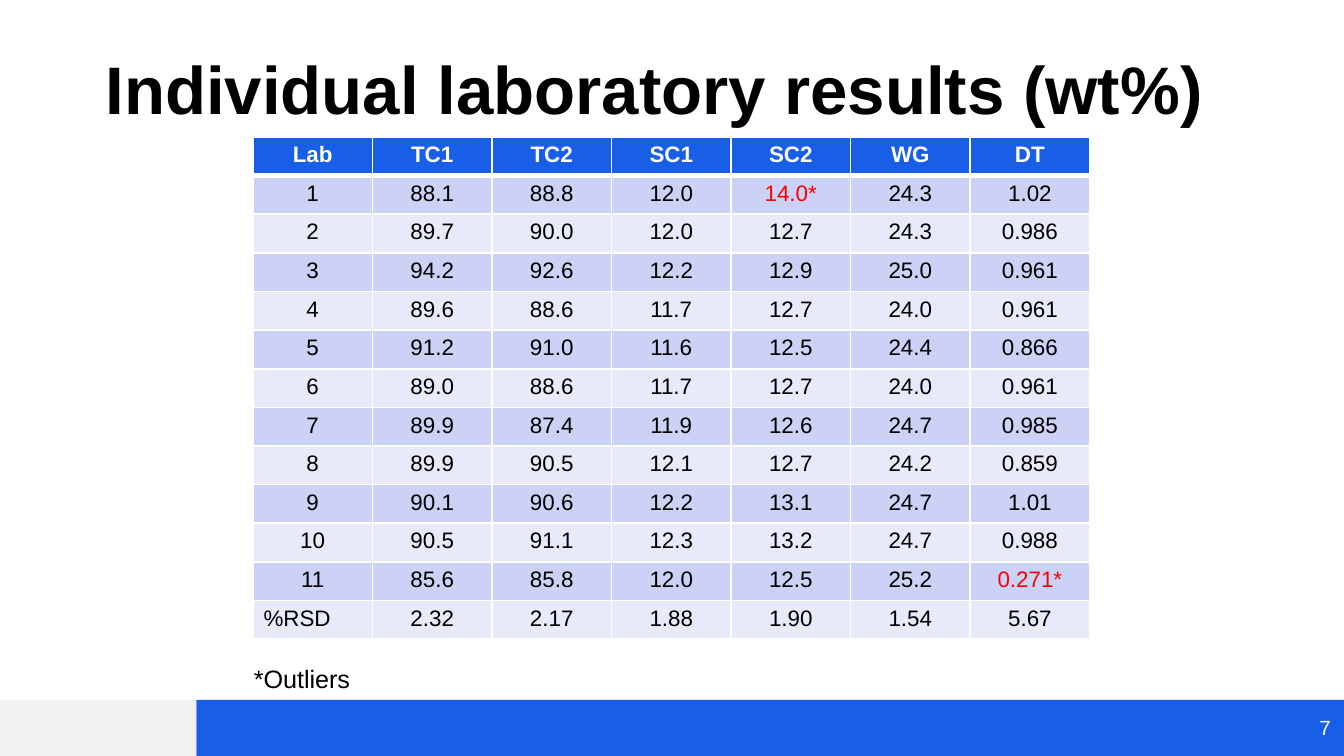
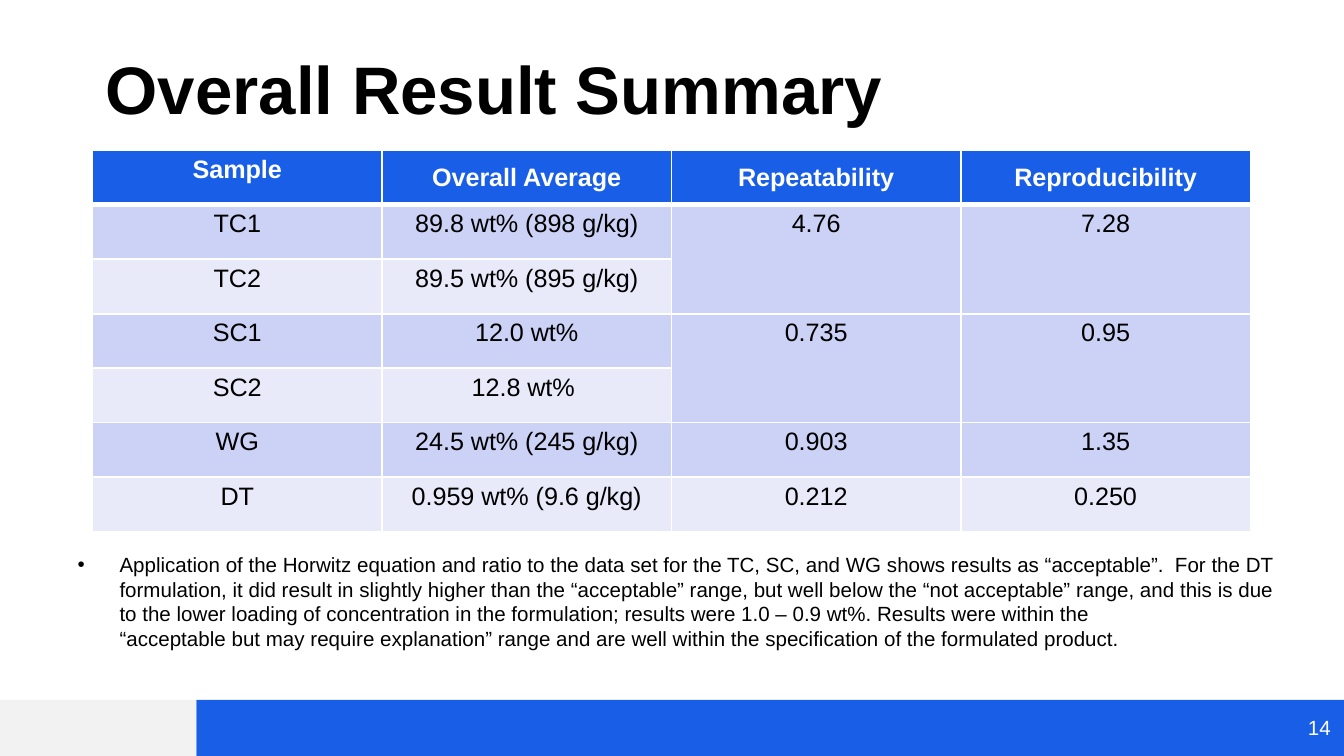
import copy

import pptx
import pptx.dml.color
import pptx.enum.shapes
import pptx.enum.text
import pptx.oxml
import pptx.oxml.ns
import pptx.util

Cm = pptx.util.Cm
Pt = pptx.util.Pt
RGBColor = pptx.dml.color.RGBColor
Align = pptx.enum.text.PP_ALIGN
Anchor = pptx.enum.text.MSO_ANCHOR

BLUE = RGBColor(0x18, 0x5E, 0xE6)
GREY = RGBColor(0xF2, 0xF2, 0xF2)
DARK_ROW = RGBColor(0xCC, 0xD2, 0xF5)
LIGHT_ROW = RGBColor(0xE8, 0xEA, 0xFA)
WHITE = RGBColor(0xFF, 0xFF, 0xFF)
BLACK = RGBColor(0x00, 0x00, 0x00)
RED = RGBColor(0xFF, 0x00, 0x00)
NAMESPACE = pptx.oxml.ns.nsdecls("a")


def write(frame, text, size=12, color=BLACK, bold=False, align=Align.LEFT,
          anchor=Anchor.TOP, line_spacing=None, bullet=None, fit=False):
    frame.vertical_anchor = anchor
    frame.word_wrap = not fit
    if fit:
        frame.auto_size = pptx.enum.text.MSO_AUTO_SIZE.SHAPE_TO_FIT_TEXT
    paragraph = frame.paragraphs[0]
    paragraph.text = text
    paragraph.alignment = align
    if line_spacing:
        paragraph.line_spacing = line_spacing
    if bullet:
        properties = paragraph._p.get_or_add_pPr()
        properties.set("marL", str(Cm(0.79)))
        properties.set("indent", str(-Cm(0.79)))
        properties.append(pptx.oxml.parse_xml(f'<a:buFont {NAMESPACE} typeface="Arial"/>'))
        properties.append(pptx.oxml.parse_xml(f'<a:buChar {NAMESPACE} char="{bullet}"/>'))
    for run in paragraph.runs:
        run.font.name = "Arial"
        run.font.size = Pt(size)
        run.font.bold = bold
        run.font.color.rgb = color
    for line_break in paragraph._p.findall(pptx.oxml.ns.qn("a:br")):
        line_break.append(copy.deepcopy(paragraph.runs[0]._r.rPr))


def draw_table(slide, rows, left, top, column_width, row_height, size):
    table = slide.shapes.add_table(
        len(rows), len(rows[0]), Cm(left), Cm(top),
        Cm(column_width * len(rows[0])), Cm(row_height * len(rows))).table
    for column in table.columns:
        column.width = Cm(column_width)
    for r, values in enumerate(rows):
        table.rows[r].height = Cm(row_height)
        for c, value in enumerate(values):
            cell = table.cell(r, c)
            cell.margin_top = cell.margin_bottom = Cm(0.1)
            cell.margin_left = cell.margin_right = Cm(0.2)
            widths = {"L": 1, "R": 1, "T": 3 if r == 1 else 1, "B": 3 if r == 0 else 1}
            for side, width in widths.items():
                cell._tc.get_or_add_tcPr().append(pptx.oxml.parse_xml(
                    f'<a:ln{side} {NAMESPACE} w="{Pt(width)}"><a:solidFill>'
                    f'<a:srgbClr val="{WHITE}"/></a:solidFill></a:ln{side}>'))
            cell.fill.solid()
            cell.fill.fore_color.rgb = BLUE if r == 0 else DARK_ROW if r % 2 else LIGHT_ROW
            color = WHITE if r == 0 else RED if value.endswith("*") else BLACK
            write(cell.text_frame, value, size=size, color=color, bold=r == 0,
                  align=Align.LEFT if value == "%RSD" else Align.CENTER)
    return table


deck = pptx.Presentation()
deck.slide_width = Cm(25.4)
deck.slide_height = Cm(14.29)

pages = []
for title, number in [("Individual laboratory results (wt%)", "7"),
                      ("Overall Result Summary", "14")]:
    page = deck.slides.add_slide(deck.slide_layouts[6])
    for left, width, color in [(3.71, 21.69, BLUE), (0, 3.71, GREY)]:
        band = page.shapes.add_shape(
            pptx.enum.shapes.MSO_SHAPE.RECTANGLE, Cm(left), Cm(13.23), Cm(width), Cm(1.06))
        band.shadow.inherit = False
        band.fill.solid()
        band.fill.fore_color.rgb = color
        band.line.fill.background()
    heading = page.shapes.add_textbox(Cm(1.75), Cm(0.48), Cm(21.9), Cm(2.08))
    write(heading.text_frame, title, size=36, bold=True, anchor=Anchor.BOTTOM, line_spacing=0.9)
    page_number = page.shapes.add_textbox(Cm(23.98), Cm(13.23), Cm(1.42), Cm(1.04))
    write(page_number.text_frame, number, size=11, color=WHITE,
          align=Align.RIGHT, anchor=Anchor.MIDDLE)
    pages.append(page)
results_page, summary_page = pages

lab_results = [
    ("Lab", "TC1", "TC2", "SC1", "SC2", "WG", "DT"),
    ("1", "88.1", "88.8", "12.0", "14.0*", "24.3", "1.02"),
    ("2", "89.7", "90.0", "12.0", "12.7", "24.3", "0.986"),
    ("3", "94.2", "92.6", "12.2", "12.9", "25.0", "0.961"),
    ("4", "89.6", "88.6", "11.7", "12.7", "24.0", "0.961"),
    ("5", "91.2", "91.0", "11.6", "12.5", "24.4", "0.866"),
    ("6", "89.0", "88.6", "11.7", "12.7", "24.0", "0.961"),
    ("7", "89.9", "87.4", "11.9", "12.6", "24.7", "0.985"),
    ("8", "89.9", "90.5", "12.1", "12.7", "24.2", "0.859"),
    ("9", "90.1", "90.6", "12.2", "13.1", "24.7", "1.01"),
    ("10", "90.5", "91.1", "12.3", "13.2", "24.7", "0.988"),
    ("11", "85.6", "85.8", "12.0", "12.5", "25.2", "0.271*"),
    ("%RSD", "2.32", "2.17", "1.88", "1.90", "1.54", "5.67"),
]
draw_table(results_page, lab_results, left=4.78, top=2.59,
           column_width=2.26, row_height=0.73, size=12)
outliers = results_page.shapes.add_textbox(Cm(4.55), Cm(12.42), Cm(2.36), Cm(0.84))
write(outliers.text_frame, "*Outliers", size=13.5, fit=True)

summary = [
    ("Sample", "Overall Average", "Repeatability", "Reproducibility"),
    ("TC1", "89.8 wt% (898 g/kg)", "4.76", "7.28"),
    ("TC2", "89.5 wt% (895 g/kg)", "", ""),
    ("SC1", "12.0 wt%", "0.735", "0.95"),
    ("SC2", "12.8 wt% ", "", ""),
    ("WG", "24.5 wt% (245 g/kg)", "0.903", "1.35"),
    ("DT", "0.959 wt% (9.6 g/kg)", "0.212", "0.250"),
]
summary_table = draw_table(summary_page, summary, left=1.75, top=2.84,
                           column_width=5.47, row_height=1.03, size=13.5)
for column in (1, 2, 3):
    summary_table.cell(0, column).vertical_anchor = Anchor.MIDDLE
for column in (2, 3):
    for row in (1, 3):
        summary_table.cell(row, column).merge(summary_table.cell(row + 1, column))

conclusion_lines = [
    "Application of the Horwitz equation and ratio to the data set for the TC, SC, and WG "
    "shows results as “acceptable”.  For the DT",
    "formulation, it did result in slightly higher than the “acceptable” range, but well below "
    "the “not acceptable” range, and this is due",
    "to the lower loading of concentration in the formulation; results were 1.0 – 0.9 wt%. "
    "Results were within the",
    "“acceptable but may require explanation” range and are well within the specification "
    "of the formulated product.",
]
conclusion = summary_page.shapes.add_textbox(Cm(1.22), Cm(10.31), Cm(23.37), Cm(2.62))
write(conclusion.text_frame, "\v".join(conclusion_lines), size=11, bullet="•", fit=True)

deck.save("out.pptx")
